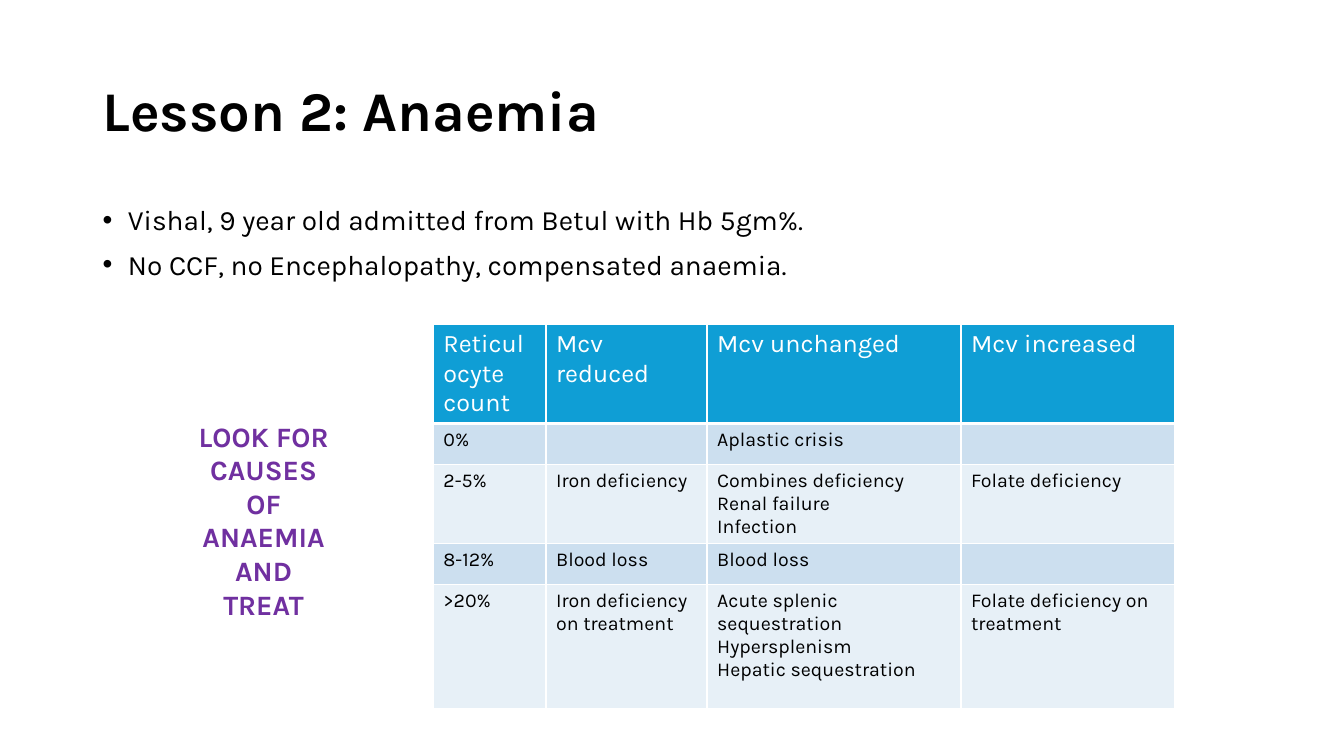
from lxml.etree import SubElement
from pptx import Presentation
from pptx.dml.color import RGBColor
from pptx.enum.shapes import MSO_SHAPE as Shape
from pptx.enum.text import MSO_ANCHOR as Anchor, MSO_AUTO_SIZE as AutoSize, PP_ALIGN as Align
from pptx.oxml.ns import qn
from pptx.util import Cm, Pt

FONT = "Karla"
BLACK, WHITE, PURPLE = "000000", "FFFFFF", "7030A0"
HEADER_FILL, BAND_FILLS = "0F9ED5", ("CCDFEF", "E7F0F7")

BULLETS = [
    "Vishal, 9 year old admitted from Betul with Hb 5gm%.",
    "No CCF, no Encephalopathy, compensated anaemia.",
]
COLUMN_WIDTHS = (2.84, 4.06, 6.4, 5.38)
ROW_HEIGHTS = (2.46, 1.04, 1.98, 1.04, 3.12)
CAUSES = [
    ("Reticulocyte count", "Mcv reduced", "Mcv unchanged", "Mcv increased"),
    ("0%", "", "Aplastic crisis", ""),
    ("2-5%", "Iron deficiency", "Combines deficiency\nRenal failure\nInfection", "Folate deficiency"),
    ("8-12%", "Blood loss", "Blood loss", ""),
    (">20%", "Iron deficiency on treatment",
     "Acute splenic sequestration\nHypersplenism\nHepatic sequestration",
     "Folate deficiency on treatment"),
]


def color(value):
    return RGBColor.from_string(value)


def place(shape, left, top, width, height):
    shape.left, shape.top = Cm(left), Cm(top)
    shape.width, shape.height = Cm(width), Cm(height)


def format_text(frame, size, ink, bold=False, align=Align.LEFT):
    for para in frame.paragraphs:
        para.alignment = align
        for span in para.runs:
            span.font.name, span.font.size, span.font.bold = FONT, Pt(size), bold
            span.font.color.rgb = color(ink)


def add_bullet(para):
    props = para._p.get_or_add_pPr()
    props.set("marL", str(Cm(0.64)))
    props.set("indent", str(-Cm(0.64)))
    SubElement(props, qn("a:buFont"), typeface="Arial")
    SubElement(props, qn("a:buChar"), char="•")


def fill_title(page, text):
    title = page.shapes.title
    place(title, 2.33, 1.01, 29.21, 3.68)
    frame = title.text_frame
    frame.text = text
    frame.auto_size = AutoSize.NONE
    frame.vertical_anchor = Anchor.MIDDLE
    frame.paragraphs[0].line_spacing = 0.9
    format_text(frame, 40, BLACK, bold=True)


def fill_body(page, lines):
    body = page.placeholders[1]
    place(body, 2.33, 5.08, 29.21, 12.09)
    frame = body.text_frame
    frame.text = "\n".join(lines)
    frame.auto_size = AutoSize.NONE
    for number, para in enumerate(frame.paragraphs):
        add_bullet(para)
        para.line_spacing = 0.9
        para.space_before = Pt(10 if number else 0)
    format_text(frame, 20, BLACK)


def add_borders(cell, bottom):
    props = cell._tc.get_or_add_tcPr()
    for side, width in (("L", 1), ("R", 1), ("T", 1), ("B", bottom)):
        line = SubElement(props, qn(f"a:ln{side}"), w=str(Pt(width)))
        paint = SubElement(line, qn("a:solidFill"))
        SubElement(paint, qn("a:srgbClr"), val=WHITE)


def add_causes_table(page, rows):
    frame = page.shapes.add_table(len(rows), len(rows[0]), Cm(10.92), Cm(8.18),
                                  Cm(sum(COLUMN_WIDTHS)), Cm(sum(ROW_HEIGHTS)))
    table = frame.table
    for column, width in zip(table.columns, COLUMN_WIDTHS):
        column.width = Cm(width)
    for number, (row, height, texts) in enumerate(zip(table.rows, ROW_HEIGHTS, rows)):
        row.height = Cm(height)
        header = number == 0
        for cell, text in zip(row.cells, texts):
            cell.text_frame.text = text
            format_text(cell.text_frame, 18 if header else 14, WHITE if header else BLACK)
            add_borders(cell, bottom=3 if header else 1)
            cell.fill.solid()
            cell.fill.fore_color.rgb = color(HEADER_FILL if header else BAND_FILLS[(number - 1) % 2])


def add_callout(page, text):
    callout = page.shapes.add_shape(Shape.OVAL, Cm(3.94), Cm(10.8), Cm(5.41), Cm(4.6))
    callout.shadow.inherit = False
    callout.fill.background()
    callout.line.fill.background()
    frame = callout.text_frame
    frame.text = text
    frame.word_wrap = True
    frame.vertical_anchor = Anchor.MIDDLE
    format_text(frame, 20, PURPLE, bold=True, align=Align.CENTER)


def main():
    deck = Presentation()
    deck.slide_width, deck.slide_height = Cm(33.87), Cm(19.05)
    page = deck.slides.add_slide(deck.slide_layouts[1])

    # Heading and case history
    fill_title(page, "Lesson 2: Anaemia")
    fill_body(page, BULLETS)

    # Causes by reticulocyte count, with the advice beside them
    add_causes_table(page, CAUSES)
    add_callout(page, "LOOK FOR CAUSES OF ANAEMIA AND TREAT")

    deck.save("out.pptx")


if __name__ == "__main__":
    main()
